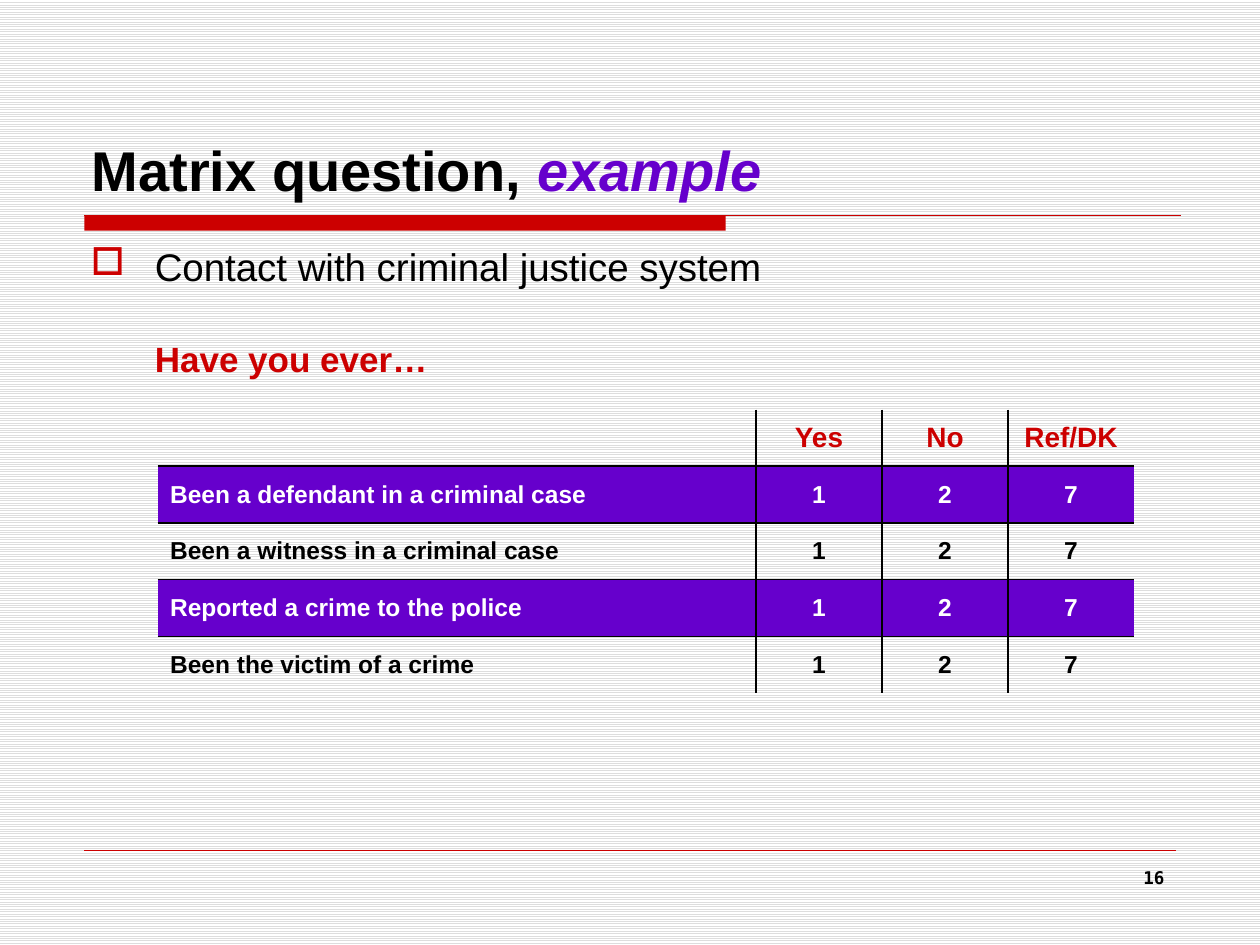
from dataclasses import dataclass

from lxml import etree
from pptx import Presentation
from pptx.dml.color import RGBColor
from pptx.enum import dml, shapes, text
from pptx.oxml import ns
from pptx.util import Inches, Pt


@dataclass(frozen=True)
class Theme:
    """Colours, fonts and type sizes of the slide."""
    black: str = "000000"
    white: str = "FFFFFF"
    red: str = "CC0000"
    purple: str = "6600CC"
    stripe: str = "DDDDDD"
    font: str = "Arial"
    number_font: str = "DejaVu Sans Mono"
    title: int = 32
    bullet: int = 22
    prompt: int = 20
    header: int = 16
    cell: int = 14
    number: int = 10


THEME = Theme()
ANSWERS = ["Yes", "No", "Ref/DK"]
CODES = ["1", "2", "7"]
QUESTIONS = [
    "Been a defendant in a criminal case",
    "Been a witness in a criminal case",
    "Reported a crime to the police",
    "Been the victim of a crime",
]


def rgb(value):
    """Turn a hex string into a colour."""
    return RGBColor.from_string(value)


def style(font, size, color, bold=False, name=THEME.font):
    """Set the look of a font."""
    font.name, font.size, font.bold = name, Pt(size), bold
    font.color.rgb = rgb(color)


def add_frame(slide, box):
    """Add a wrapping text box and return its text frame."""
    frame = slide.shapes.add_textbox(*map(Inches, box)).text_frame
    frame.word_wrap = True
    return frame


def add_rule(slide, left, top, right, width):
    """Draw a horizontal red line."""
    rule = slide.shapes.add_connector(
        shapes.MSO_CONNECTOR.STRAIGHT,
        Inches(left), Inches(top), Inches(right), Inches(top))
    rule.line.color.rgb = rgb(THEME.red)
    rule.line.width = Pt(width)
    etree.SubElement(rule._element.spPr, ns.qn("a:effectLst"))


def paint_background(slide):
    """Fill the background with light horizontal stripes."""
    fill = slide.background.fill
    fill.patterned()
    fill.pattern = dml.MSO_PATTERN.LIGHT_HORIZONTAL
    fill.fore_color.rgb = rgb(THEME.stripe)
    fill.back_color.rgb = rgb(THEME.white)


def add_title_bar(slide, box):
    """Draw the thick bar and the thin rule along its top."""
    left, top, width, height = box
    bar = slide.shapes.add_shape(
        shapes.MSO_SHAPE.RECTANGLE,
        Inches(left), Inches(top), Inches(5.09), Inches(height))
    bar.shadow.inherit = False
    bar.fill.solid()
    bar.fill.fore_color.rgb = rgb(THEME.red)
    bar.line.fill.background()
    add_rule(slide, left, top, left + width, 0.75)


def add_title(slide, box):
    """Write the title with its emphasised last word."""
    frame = add_frame(slide, box)
    frame.vertical_anchor = text.MSO_ANCHOR.BOTTOM
    paragraph = frame.paragraphs[0]
    for words, color in [("Matrix question, ", THEME.black), ("example", THEME.purple)]:
        run = paragraph.add_run()
        run.text = words
        style(run.font, THEME.title, color, bold=True)
    run.font.italic = True


def add_body(slide, box):
    """Write the bulleted topic and the prompt below it."""
    frame = add_frame(slide, box)
    topic, prompt = frame.paragraphs[0], frame.add_paragraph()
    topic.text = "Contact with criminal justice system"
    prompt.text = "Have you ever…"
    style(topic.font, THEME.bullet, THEME.black)
    style(prompt.font, THEME.prompt, THEME.red, bold=True)
    topic.space_before, prompt.space_before = Pt(4.4), Pt(30)
    for paragraph in (topic, prompt):
        paragraph.line_spacing = 0.9
        paragraph._p.get_or_add_pPr().set("marL", str(Inches(0.51)))
    properties = topic._p.get_or_add_pPr()
    properties.set("indent", str(-Inches(0.51)))
    color = etree.Element(ns.qn("a:buClr"))
    etree.SubElement(color, ns.qn("a:srgbClr"), val=THEME.red)
    bullet = etree.Element(ns.qn("a:buChar"), char="□")
    properties.find(ns.qn("a:spcBef")).addnext(color)
    color.addnext(bullet)


def set_borders(cell, sides):
    """Draw the named sides of a cell and clear the others."""
    properties = cell._tc.get_or_add_tcPr()
    for side in "LRTB":
        line = etree.SubElement(properties, ns.qn(f"a:ln{side}"), w=str(Pt(1)))
        if side in sides:
            fill = etree.SubElement(line, ns.qn("a:solidFill"))
            etree.SubElement(fill, ns.qn("a:srgbClr"), val=THEME.black)
        else:
            etree.SubElement(line, ns.qn("a:noFill"))


def fill_cell(cell, words, size, color, bold_fill, centered):
    """Write one table cell and paint it."""
    cell.vertical_anchor = text.MSO_ANCHOR.MIDDLE
    paragraph = cell.text_frame.paragraphs[0]
    paragraph.text = words
    paragraph.space_before = Pt(size * 0.2)
    paragraph.alignment = text.PP_ALIGN.CENTER if centered else text.PP_ALIGN.LEFT
    style(paragraph.font, size, color, bold=True)
    if bold_fill:
        cell.fill.solid()
        cell.fill.fore_color.rgb = rgb(THEME.purple)
    else:
        cell.fill.background()


def add_matrix(slide, box):
    """Build the question matrix with inner borders and alternate filled rows."""
    rows = [["", *ANSWERS]] + [[question, *CODES] for question in QUESTIONS]
    last_row, last_column = len(rows) - 1, len(ANSWERS)
    table = slide.shapes.add_table(
        len(rows), last_column + 1, *map(Inches, box)).table
    table.first_row = table.horz_banding = False
    for index, column in enumerate(table.columns):
        column.width = Inches(1 if index else box[2] - last_column)
    for r, row in enumerate(rows):
        filled = r % 2 == 1
        size = THEME.cell if r else THEME.header
        color = THEME.red if r == 0 else THEME.white if filled else THEME.black
        for c, words in enumerate(row):
            inner = {"L": c > 0, "R": c < last_column, "T": r > 0, "B": r < last_row}
            cell = table.cell(r, c)
            set_borders(cell, [side for side, drawn in inner.items() if drawn])
            fill_cell(cell, words, size, color, filled, c > 0)


def add_footer(slide, box):
    """Write the slide number at the right."""
    paragraph = add_frame(slide, box).paragraphs[0]
    paragraph.text = "16"
    paragraph.alignment = text.PP_ALIGN.RIGHT
    style(paragraph.font, THEME.number, THEME.black, bold=True, name=THEME.number_font)


def main():
    """Build the slide and save it."""
    presentation = Presentation()
    presentation.slide_width, presentation.slide_height = Inches(10), Inches(7.5)
    slide = presentation.slides.add_slide(presentation.slide_layouts[6])
    paint_background(slide)
    add_title_bar(slide, (0.67, 1.71, 8.7, 0.12))
    add_rule(slide, 0.67, 6.75, 9.33, 0.25)
    add_footer(slide, (7.17, 6.83, 2.17, 0.52))
    add_title(slide, (0.63, 0.33, 8.75, 1.33))
    add_body(slide, (0.62, 1.92, 8.75, 1.17))
    add_matrix(slide, (1.25, 3.25, 7.75, 2.25))
    presentation.save("out.pptx")


if __name__ == "__main__":
    main()
